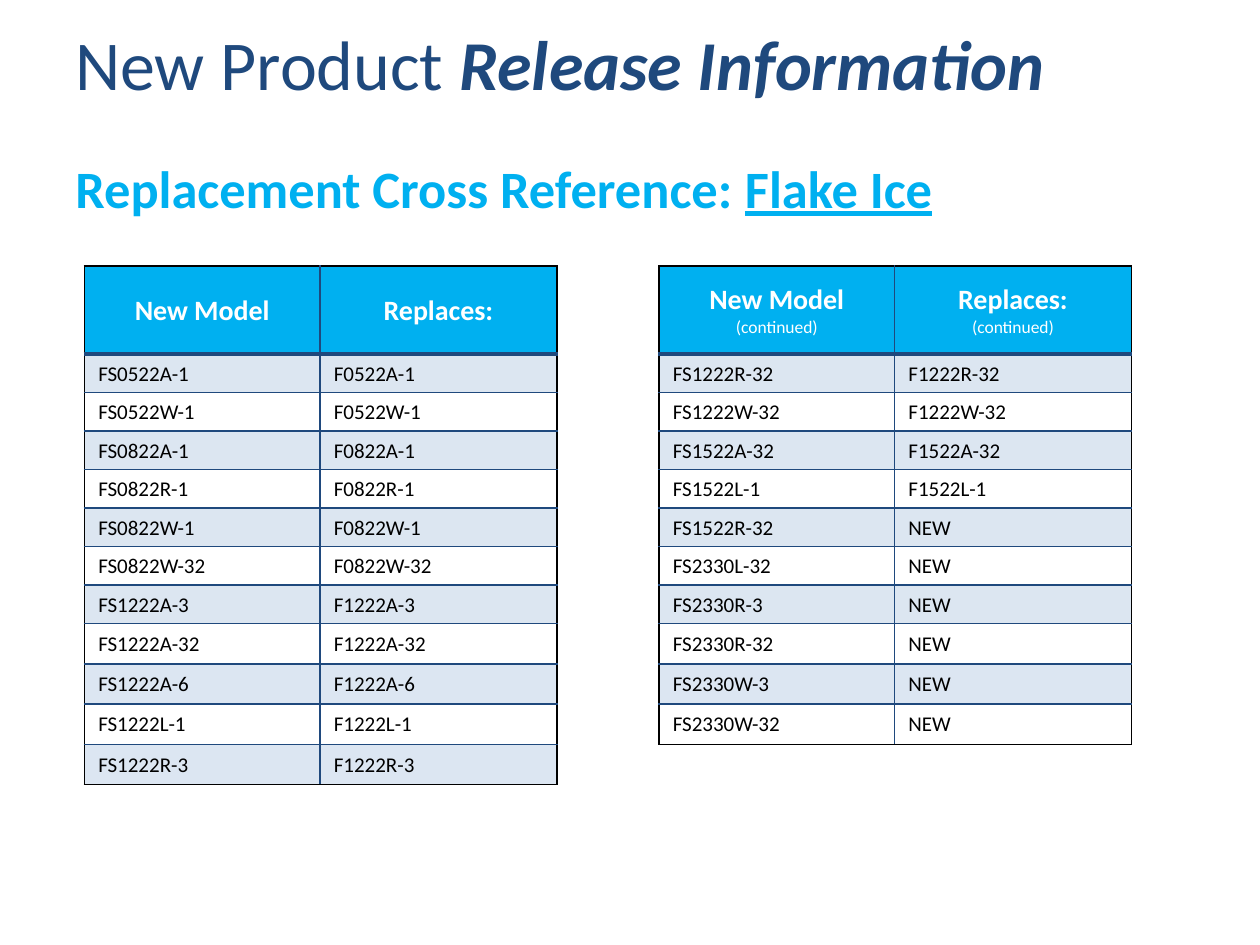
from lxml.etree import SubElement
from pptx import Presentation
from pptx.dml.color import RGBColor
from pptx.enum.text import MSO_ANCHOR, PP_ALIGN
from pptx.oxml import parse_xml
from pptx.oxml.ns import nsdecls
from pptx.util import Inches, Pt

NAVY = RGBColor(0x1F, 0x49, 0x7D)
SKY = RGBColor(0x00, 0xB0, 0xF0)
PALE = RGBColor(0xDC, 0xE6, 0xF1)
PALE_LOW = RGBColor(0xDC, 0xE6, 0xF2)
WHITE = RGBColor(0xFF, 0xFF, 0xFF)
BLACK = RGBColor(0x00, 0x00, 0x00)


def add_run(p, text, size, color, **formats):
    r = p.add_run()
    r.text = text
    r.font.color.rgb = color
    for name, value in {"name": "Calibri", "size": Pt(size), **formats}.items():
        setattr(r.font, name, value)


def add_borders(cell, borders):
    tcPr = cell._tc.get_or_add_tcPr()
    for i, (side, color, width) in enumerate(borders):
        tcPr.insert(i, parse_xml(
            f'<a:ln{side} {nsdecls("a")} w="{Pt(width)}"><a:solidFill>'
            f'<a:srgbClr val="{color}"/></a:solidFill></a:ln{side}>'))


prs = Presentation()
prs.slide_width, prs.slide_height = Inches(10), Inches(7.5)
s = prs.slides.add_slide(prs.slide_layouts[6])

headings = [
    (0.11, 9, 0.81, 40, NAVY, [
        ("New Product", {}),
        (" Release Information", {"bold": True, "italic": True})]),
    (1.19, 7.7, 5.26, 30, SKY, [
        ("Replacement Cross Reference: ", {"bold": True}),
        ("Flake Ice", {"bold": True, "underline": True})]),
]
for top, width, height, size, color, runs in headings:
    sp = s.shapes.add_textbox(Inches(0.5), Inches(top), Inches(width), Inches(height))
    tf = sp.text_frame
    tf.word_wrap = True
    for text, formats in runs:
        add_run(tf.paragraphs[0], text, size, color, **formats)

tables = [
    (0.67, 4.11, None, [
        ("FS0522A-1", "F0522A-1"),
        ("FS0522W-1", "F0522W-1"),
        ("FS0822A-1", "F0822A-1"),
        ("FS0822R-1", "F0822R-1"),
        ("FS0822W-1", "F0822W-1"),
        ("FS0822W-32", "F0822W-32"),
        ("FS1222A-3", "F1222A-3"),
        ("FS1222A-32", "F1222A-32"),
        ("FS1222A-6", "F1222A-6"),
        ("FS1222L-1", "F1222L-1"),
        ("FS1222R-3", "F1222R-3")]),
    (5.23, 3.79, "(continued)", [
        ("FS1222R-32", "F1222R-32"),
        ("FS1222W-32", "F1222W-32"),
        ("FS1522A-32", "F1522A-32"),
        ("FS1522L-1", "F1522L-1"),
        ("FS1522R-32", "NEW"),
        ("FS2330L-32", "NEW"),
        ("FS2330R-3", "NEW"),
        ("FS2330R-32", "NEW"),
        ("FS2330W-3", "NEW"),
        ("FS2330W-32", "NEW")]),
]
for left, height, note, models in tables:
    rows = [("New Model", "Replaces:")] + models
    last = len(rows) - 1
    table = s.shapes.add_table(len(rows), 2, Inches(left), Inches(2.11),
                               Inches(3.75), Inches(height)).table
    table.first_row = table.horz_banding = False
    table.columns[0].width, table.columns[1].width = Inches(1.87), Inches(1.88)
    for i, row in enumerate(rows):
        if i == 0:
            table.rows[i].height = Inches(0.7)
        elif i <= 7:
            table.rows[i].height = Inches(2.14) // 7
        else:
            table.rows[i].height = Inches(0.32)
        for j, text in enumerate(row):
            cell = table.cell(i, j)
            cell.vertical_anchor = MSO_ANCHOR.MIDDLE
            cell.margin_left = cell.margin_top = cell.margin_right = Inches(0.01)
            cell.margin_bottom = 0
            if i % 2 or i == 0:
                cell.fill.solid()
                cell.fill.fore_color.rgb = SKY if i == 0 else PALE if i <= 7 else PALE_LOW
            else:
                cell.fill.background()
            p = cell.text_frame.paragraphs[0]
            if i == 0:
                p.alignment = PP_ALIGN.CENTER
                add_run(p, text, 16, WHITE, bold=True)
                if note:
                    p = cell.text_frame.add_paragraph()
                    p.alignment = PP_ALIGN.CENTER
                    add_run(p, note, 10, WHITE, bold=False)
            else:
                p._p.get_or_add_pPr().set("marL", str(Inches(0.1)))
                add_run(p, text, 12, BLACK, bold=False)
            add_borders(cell, [
                ("L", BLACK if j == 0 else NAVY, 1),
                ("R", BLACK if j == 1 else NAVY, 1),
                ("T", BLACK if i == 0 else NAVY, 2.25 if i == 1 else 1),
                ("B", BLACK if i == last else NAVY, 2.25 if i == 0 else 1)])

prs.save("out.pptx")
